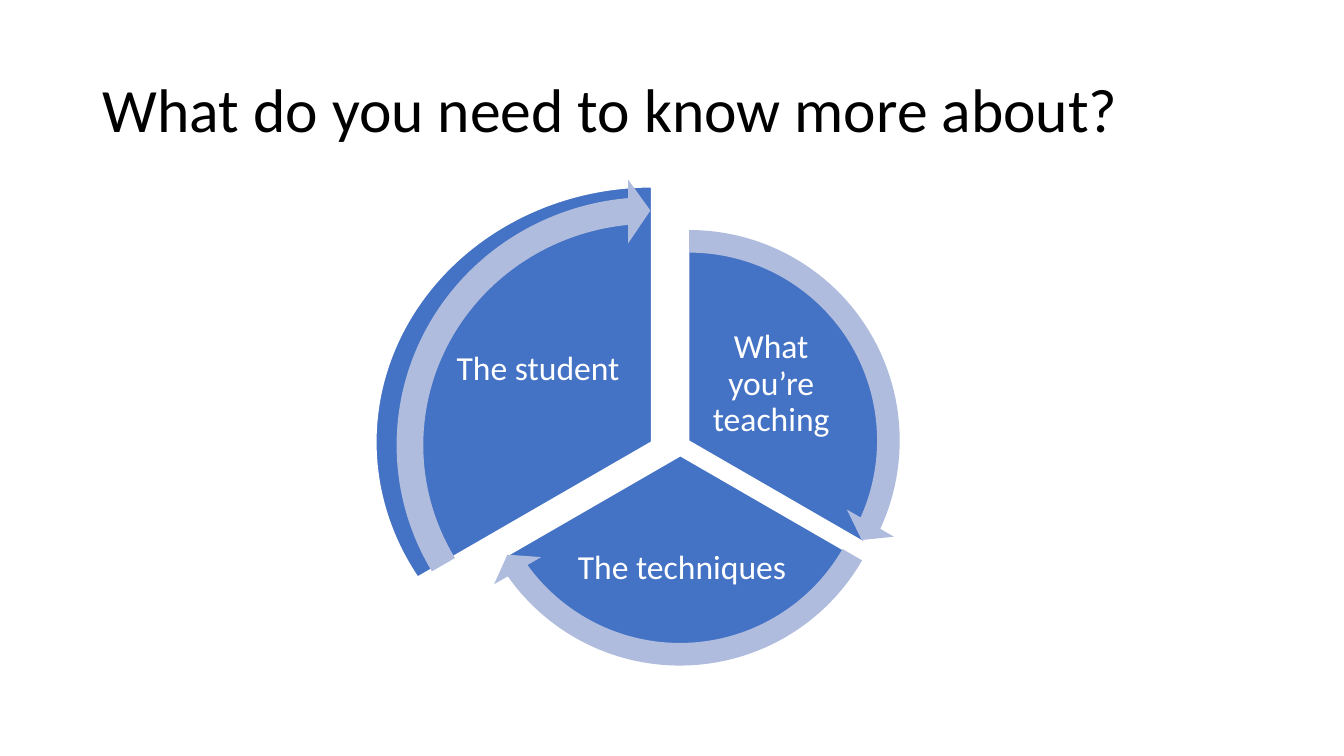
from pptx import Presentation
from pptx.dml.color import RGBColor
from pptx.enum.shapes import MSO_SHAPE as SHAPE
from pptx.enum.text import MSO_ANCHOR as ANCHOR, PP_ALIGN as ALIGN
from pptx.util import Pt

PX = 9525
FONT = "Calibri"
BLACK = RGBColor(0x00, 0x00, 0x00)
WHITE = RGBColor(0xFF, 0xFF, 0xFF)
BLUE = RGBColor(0x44, 0x72, 0xC4)
PALE_BLUE = RGBColor(0xB0, 0xBC, 0xDE)
HEAD_ANGLE = 3.28

SECTORS = [
    ("What you’re teaching", 162, 18,
     (464, 228, 384, 384), (666, 309, 137, 114), (441, 204, 431, 431)),
    ("The techniques", 18, 90,
     (456, 242, 384, 384), (547, 491, 205, 101), (432, 218, 431, 431)),
    ("The student", 90, 162,
     (358, 178, 525, 486), (419, 280, 187, 145), (360, 170, 519, 508)),
]


def emu(box):
    """Turn a box in px into EMU."""
    return [v * PX for v in box]


def add_text(s, text, box, size, color, align, insets):
    """Add a one-paragraph text box, centred vertically."""
    tf = s.shapes.add_textbox(*emu(box)).text_frame
    tf.word_wrap = True
    tf.vertical_anchor = ANCHOR.MIDDLE
    tf.margin_left = tf.margin_right = insets[0] * PX
    tf.margin_top = tf.margin_bottom = insets[1] * PX
    p = tf.paragraphs[0]
    p.alignment = align
    p.line_spacing = 0.9
    r = p.add_run()
    r.text = text
    r.font.name = FONT
    r.font.size = Pt(size)
    r.font.color.rgb = color


def add_filled(s, kind, box, color, adjustments):
    """Add a flat preset shape with its adjustments."""
    sp = s.shapes.add_shape(kind, *emu(box))
    sp.shadow.inherit = False
    sp.fill.solid()
    sp.fill.fore_color.rgb = color
    sp.line.fill.background()
    for i, value in enumerate(adjustments):
        sp.adjustments[i] = value
    return sp


def add_sector(s, box, start, end):
    """Add a pie sector with a thin white outline."""
    sp = add_filled(s, SHAPE.PIE, box, BLUE, (start, end))
    sp.line.color.rgb = WHITE
    sp.line.width = Pt(1)


def add_arc_arrow(s, box, start, end):
    """Add a circular arrow that follows a sector's rim."""
    add_filled(s, SHAPE.CIRCULAR_ARROW, box, PALE_BLUE,
               (0.05, HEAD_ANGLE, end - HEAD_ANGLE, start, 0.06))


def main():
    """Build the slide and save it."""
    prs = Presentation()
    prs.slide_width, prs.slide_height = 1280 * PX, 720 * PX
    s = prs.slides.add_slide(prs.slide_layouts[6])
    add_text(s, "What do you need to know more about?",
             (88, 38, 1104, 139), 44, BLACK, ALIGN.LEFT, (10, 5))
    for text, start, end, pie_box, text_box, _ in SECTORS:
        add_sector(s, pie_box, start, end)
        add_text(s, text, text_box, 24, WHITE, ALIGN.CENTER, (3, 3))
    for _, start, end, _, _, arrow_box in SECTORS:
        add_arc_arrow(s, arrow_box, start, end)
    prs.save("out.pptx")


if __name__ == "__main__":
    main()
